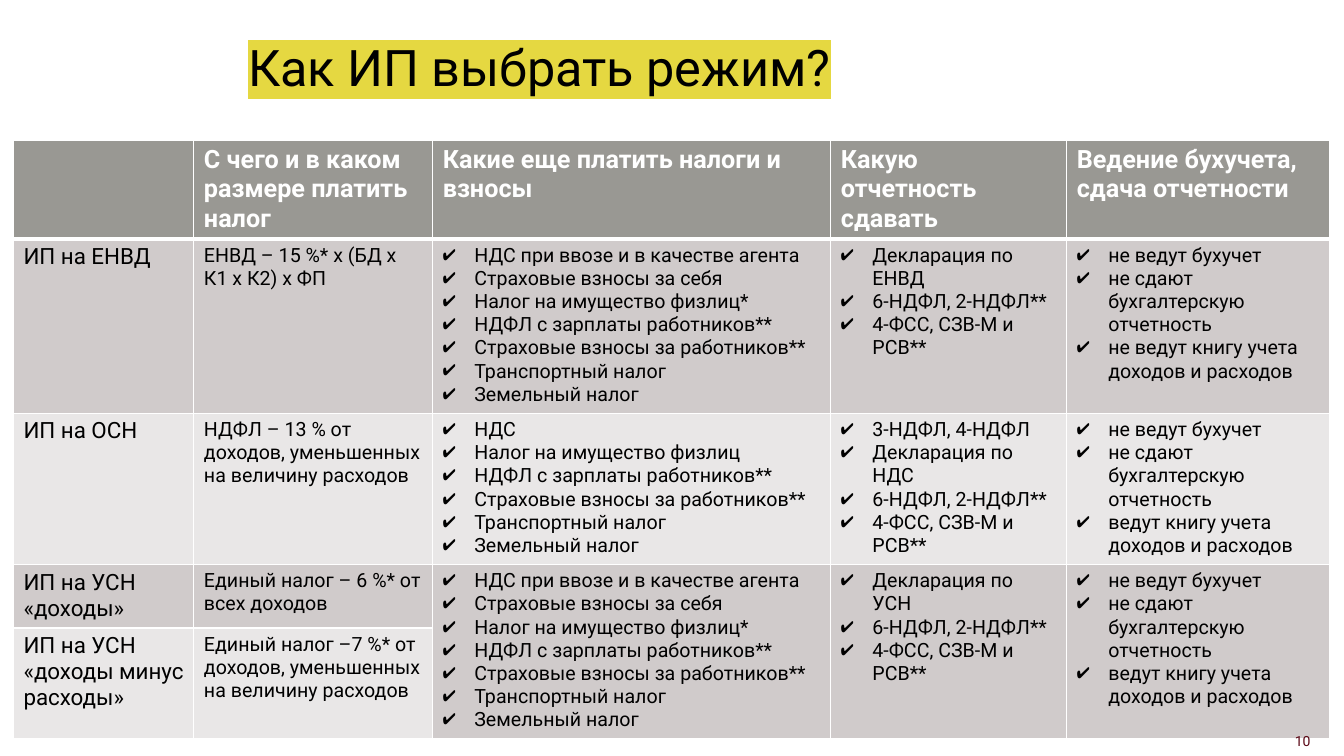
import pptx
import pptx.util
import pptx.dml.color
import pptx.enum.text
import pptx.oxml
import pptx.oxml.ns
from lxml import etree

Pt = pptx.util.Pt
RGB = pptx.dml.color.RGBColor
PP_ALIGN = pptx.enum.text.PP_ALIGN
qn = pptx.oxml.ns.qn

BLACK = RGB(0, 0, 0)
WHITE = RGB(255, 255, 255)
YELLOW = RGB(0xE5, 0xD8, 0x41)
HEADER = RGB(0x99, 0x98, 0x93)
BAND_DARK = RGB(0xD0, 0xCB, 0xCB)
BAND_LIGHT = RGB(0xE9, 0xE7, 0xE7)
MAROON = RGB(0x5B, 0x09, 0x17)
FONT = "Roboto"

TITLE = "Как ИП выбрать режим?"
PAGE = "10"
HEADINGS = ["", "С чего и в каком размере платить налог",
            "Какие еще платить налоги и взносы",
            "Какую отчетность сдавать",
            "Ведение бухучета, сдача отчетности"]
STAFF_AND_LAND = ["НДФЛ с зарплаты работников**",
                  "Страховые взносы за работников**",
                  "Транспортный налог", "Земельный налог"]
SPECIAL_TAXES = ["НДС при ввозе и в качестве агента",
                 "Страховые взносы за себя",
                 "Налог на имущество физлиц*"] + STAFF_AND_LAND
STAFF_REPORTS = ["6-НДФЛ, 2-НДФЛ**", "4-ФСС, СЗВ-М и РСВ**"]
NO_ACCOUNTS = ["не ведут бухучет", "не сдают бухгалтерскую отчетность"]
WITH_BOOK = NO_ACCOUNTS + ["ведут книгу учета доходов и расходов"]

# A string is plain text, a list is ticked, None continues the cell above.
REGIMES = [
    ["ИП на ЕНВД", "ЕНВД – 15 %* х (БД х К1 х К2) х ФП", SPECIAL_TAXES,
     ["Декларация по ЕНВД"] + STAFF_REPORTS,
     NO_ACCOUNTS + ["не ведут книгу учета доходов и расходов"]],
    ["ИП на ОСН", "НДФЛ – 13 % от доходов, уменьшенных на величину расходов",
     ["НДС", "Налог на имущество физлиц"] + STAFF_AND_LAND,
     ["3-НДФЛ, 4-НДФЛ", "Декларация по НДС"] + STAFF_REPORTS, WITH_BOOK],
    ["ИП на УСН «доходы»", "Единый налог – 6 %* от всех доходов",
     SPECIAL_TAXES, ["Декларация по УСН"] + STAFF_REPORTS, WITH_BOOK],
    ["ИП на УСН «доходы минус расходы»",
     "Единый налог –7 %* от доходов, уменьшенных на величину расходов",
     None, None, None],
]
COL_WIDTHS = [128.9, 170.6, 284.4, 168.5, 187.9]
ROW_HEIGHTS = [64.8, 124.6, 108, 45.4, 79.2]
TABLE_LEFT, TABLE_TOP = 9.6, 100
TICK_INDENT = 22.5


def add_run(p, text, size, color, bold=False):
    r = p.add_run()
    r.text = text
    r.font.size, r.font.bold, r.font.name = Pt(size), bold, FONT
    r.font.color.rgb = color
    return r


def add_tick(p):
    pPr = p._p.get_or_add_pPr()
    pPr.set("marL", str(Pt(TICK_INDENT)))
    pPr.set("indent", str(-Pt(TICK_INDENT)))
    clr = etree.SubElement(pPr, qn("a:buClr"))
    etree.SubElement(clr, qn("a:srgbClr"), val=str(BLACK))
    etree.SubElement(pPr, qn("a:buChar"), char="✔")


def style_cell(cell, fill, top, bottom):
    """Draw white borders, then the fill, as the schema orders them."""
    tcPr = cell._tc.get_or_add_tcPr()
    for side, width in (("L", 1), ("R", 1), ("T", top), ("B", bottom)):
        ln = etree.SubElement(tcPr, qn("a:ln" + side), w=str(Pt(width)))
        solid = etree.SubElement(ln, qn("a:solidFill"))
        etree.SubElement(solid, qn("a:srgbClr"), val=str(WHITE))
    cell.fill.solid()
    cell.fill.fore_color.rgb = fill


def write_cell(cell, content, size, color, bold):
    ticked = isinstance(content, list)
    tf = cell.text_frame
    for i, line in enumerate(content if ticked else [content]):
        p = tf.add_paragraph() if i else tf.paragraphs[0]
        if ticked:
            add_tick(p)
        add_run(p, line, size, color, bold)


def add_title(slide):
    sp = slide.shapes.title
    sp.left, sp.top, sp.width, sp.height = Pt(170), Pt(20), Pt(536.4), Pt(62.6)
    tf = sp.text_frame
    tf.auto_size = pptx.enum.text.MSO_AUTO_SIZE.NONE
    tf.vertical_anchor = pptx.enum.text.MSO_ANCHOR.MIDDLE
    p = tf.paragraphs[0]
    p.alignment, p.line_spacing = PP_ALIGN.LEFT, 0.8
    r = add_run(p, TITLE, 36, BLACK)
    highlight = etree.Element(qn("a:highlight"))
    etree.SubElement(highlight, qn("a:srgbClr"), val=str(YELLOW))
    r._r.rPr.find(qn("a:latin")).addprevious(highlight)


def add_regime_table(slide):
    rows = [HEADINGS] + REGIMES
    table = slide.shapes.add_table(
        len(rows), len(HEADINGS), Pt(TABLE_LEFT), Pt(TABLE_TOP),
        Pt(sum(COL_WIDTHS)), Pt(sum(ROW_HEIGHTS))).table
    table.first_row = table.horz_banding = False
    for col, width in zip(table.columns, COL_WIDTHS):
        col.width = Pt(width)
    for row, height in zip(table.rows, ROW_HEIGHTS):
        row.height = Pt(height)

    for i, row in enumerate(rows):
        band = BAND_DARK if i % 2 else BAND_LIGHT
        for j, content in enumerate(row):
            cell = table.cell(i, j)
            if content is None:
                style_cell(cell, BAND_DARK, 1, 1)
                table.cell(i - 1, j).merge(cell)
                continue
            style_cell(cell, band if i else HEADER,
                       3 if i == 1 else 1, 1 if i else 3)
            if not content:
                continue
            if i == 0:
                write_cell(cell, content, 18, WHITE, True)
            else:
                write_cell(cell, content, 14 if j else 16, BLACK, False)


def add_page_number(slide):
    sp = slide.shapes.add_textbox(Pt(882.7), Pt(519.8), Pt(60.5), Pt(20.2))
    tf = sp.text_frame
    tf.word_wrap = True
    p = tf.paragraphs[0]
    p.alignment = PP_ALIGN.RIGHT
    add_run(p, PAGE, 10, MAROON)


def main():
    prs = pptx.Presentation()
    prs.slide_width, prs.slide_height = Pt(960), Pt(540)
    slide = prs.slides.add_slide(prs.slide_layouts[5])
    add_title(slide)
    add_regime_table(slide)
    add_page_number(slide)
    prs.save("out.pptx")


if __name__ == "__main__":
    main()
